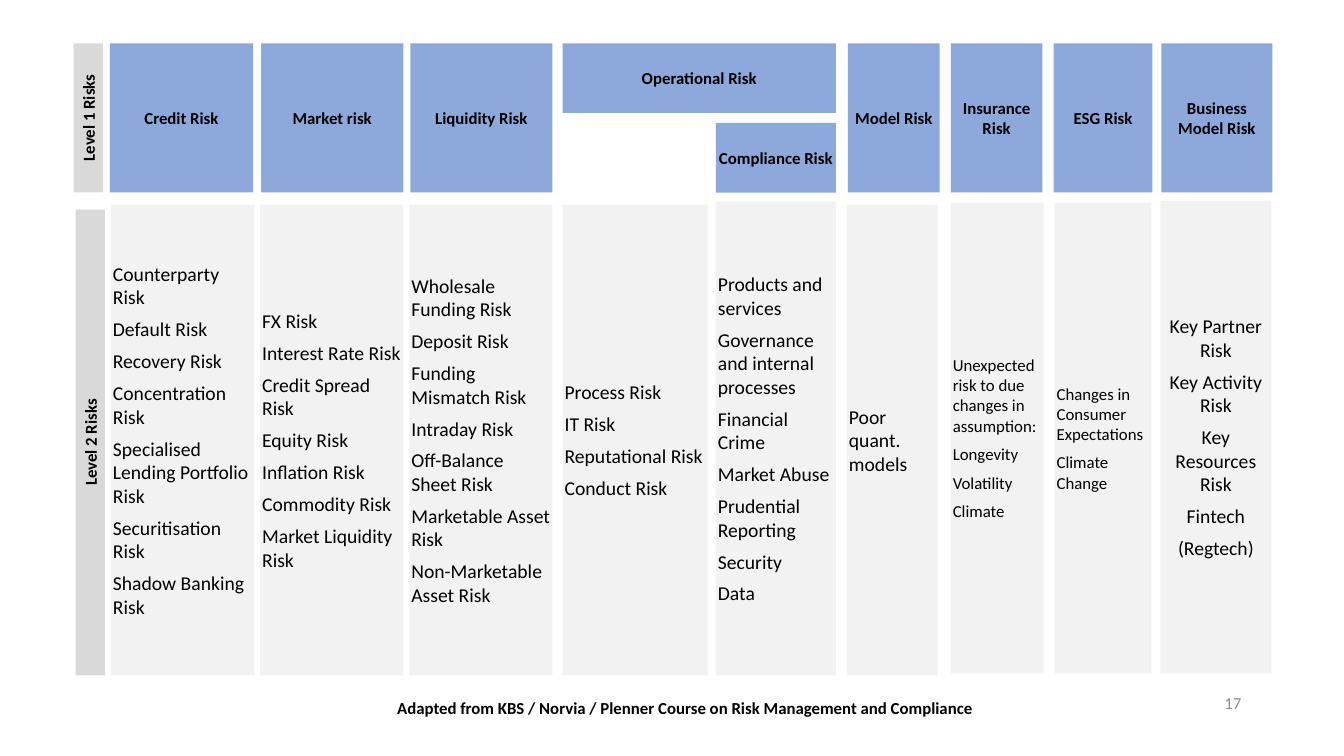
"""Build a risk taxonomy slide with level 1 risks above their level 2 risks."""
from dataclasses import dataclass

from pptx import Presentation
from pptx import util as u
from pptx.dml import color
from pptx.enum import shapes, text


@dataclass(frozen=True)
class Theme:
    """Colours, font and type sizes of the slide."""
    font: str = "Calibri"
    ink: str = "000000"
    muted: str = "8C8C8C"
    level_1: str = "8DA9DB"
    level_2: str = "F2F2F2"
    label: str = "D9D9D9"
    small: int = 12
    large: int = 14


class RiskSlide:
    """Draws each kind of element on one slide in the theme's style."""

    def __init__(self, deck, theme):
        """Add a blank slide to the deck."""
        self.theme = theme
        self.slide = deck.slides.add_slide(deck.slide_layouts[6])

    def add_lines(self, frame, lines, size, align, bold=False, ink=None, before=0, after=0):
        """Put one paragraph per line into a text frame."""
        frame.word_wrap = True
        for index, line in enumerate(lines):
            paragraph = frame.add_paragraph() if index else frame.paragraphs[0]
            paragraph.alignment = align
            paragraph.space_before = u.Pt(before)
            paragraph.space_after = u.Pt(after)
            run = paragraph.add_run()
            run.text = line
            run.font.name = self.theme.font
            run.font.size = u.Pt(size)
            run.font.bold = bold
            run.font.color.rgb = color.RGBColor.from_string(ink or self.theme.ink)

    def block(self, place, fill, inset, direction="horz"):
        """Add a flat rectangle and return its text frame."""
        rectangle = self.slide.shapes.add_shape(
            shapes.MSO_SHAPE.RECTANGLE, *map(u.Inches, place))
        rectangle.shadow.inherit = False
        rectangle.fill.solid()
        rectangle.fill.fore_color.rgb = color.RGBColor.from_string(fill)
        rectangle.line.fill.background()
        rectangle.element.txBody.bodyPr.set("vert", direction)
        frame = rectangle.text_frame
        frame.vertical_anchor = text.MSO_ANCHOR.MIDDLE
        frame.margin_left = frame.margin_right = u.Inches(inset)
        return frame

    def heading(self, place, title, inset=0.04):
        """Add a level 1 risk."""
        frame = self.block(place, self.theme.level_1, inset)
        self.add_lines(frame, [title], self.theme.small, text.PP_ALIGN.CENTER, bold=True)

    def risks(self, place, names, size, centred=False):
        """Add a column of level 2 risks."""
        frame = self.block(place, self.theme.level_2, 0.02)
        if centred:
            self.add_lines(frame, names, size, text.PP_ALIGN.CENTER, before=6)
        else:
            self.add_lines(frame, names, size, text.PP_ALIGN.LEFT, after=6)

    def row_label(self, place, title):
        """Add a row label that reads upwards."""
        frame = self.block(place, self.theme.label, 0.1, "vert270")
        self.add_lines(frame, [title], self.theme.small, text.PP_ALIGN.CENTER, bold=True)

    def caption(self, place, line, align, anchor, bold=False, ink=None):
        """Add a line of text without a fill."""
        frame = self.slide.shapes.add_textbox(*map(u.Inches, place)).text_frame
        frame.vertical_anchor = anchor
        self.add_lines(frame, [line], self.theme.small, align, bold, ink)


TOP, FULL_HEIGHT, HALF_HEIGHT = 0.43, 1.48, 0.69
COMPLIANCE_TOP = TOP + FULL_HEIGHT - HALF_HEIGHT

LEVEL_1 = [
    ("Credit Risk", 1.09, 1.42),
    ("Market risk", 2.59, 1.41),
    ("Liquidity Risk", 4.07, 1.41),
    ("Model Risk", 8.41, 0.91),
    ("Insurance Risk", 9.43, 0.91),
    ("ESG Risk", 10.45, 0.98),
    ("Business Model Risk", 11.52, 1.1),
]

LEVEL_2 = [
    ((1.1, 2.03, 1.42, 4.67), [
        "Counterparty Risk", "Default Risk", "Recovery Risk", "Concentration Risk",
        "Specialised Lending Portfolio Risk", "Securitisation Risk",
        "Shadow Banking Risk"]),
    ((2.58, 2.03, 1.42, 4.67), [
        "FX Risk", "Interest Rate Risk", "Credit Spread Risk", "Equity Risk",
        "Inflation Risk", "Commodity Risk", "Market Liquidity Risk"]),
    ((4.06, 2.03, 1.42, 4.67), [
        "Wholesale Funding Risk", "Deposit Risk", "Funding Mismatch Risk",
        "Intraday Risk", "Off-Balance Sheet Risk", "Marketable Asset Risk",
        "Non-Marketable Asset Risk"]),
    ((5.58, 2.03, 1.44, 4.67), [
        "Process Risk", "IT Risk", "Reputational Risk", "Conduct Risk"]),
    ((7.1, 2, 1.19, 4.7), [
        "Products and services", "Governance and internal processes",
        "Financial Crime", "Market Abuse", "Prudential Reporting", "Security",
        "Data"]),
    ((8.4, 2.03, 0.9, 4.67), ["Poor quant. models"]),
]

LEVEL_2_SMALL = [
    ((9.43, 2.01, 0.92, 4.67), [
        "Unexpected risk to due changes in assumption:", "Longevity", "Volatility",
        "Climate"]),
    ((10.46, 2.01, 0.96, 4.67), [
        "Changes in Consumer Expectations", "Climate Change"]),
]

BUSINESS_MODEL_RISKS = [
    "Key Partner Risk", "Key Activity Risk", "Key Resources Risk", "Fintech",
    "(Regtech)"]


def main():
    """Build and save the deck."""
    deck = Presentation()
    deck.slide_width, deck.slide_height = u.Inches(13.33), u.Inches(7.5)
    theme = Theme()
    page = RiskSlide(deck, theme)

    page.row_label((0.73, TOP, 0.29, FULL_HEIGHT), "Level 1 Risks")
    for title, left, width in LEVEL_1:
        page.heading((left, TOP, width, FULL_HEIGHT), title)
    page.heading((5.58, TOP, 2.71, HALF_HEIGHT), "Operational Risk")
    page.heading((7.1, COMPLIANCE_TOP, 1.19, HALF_HEIGHT), "Compliance Risk", inset=0)

    page.row_label((0.75, 2.08, 0.29, 4.62), "Level 2 Risks")
    for place, names in LEVEL_2:
        page.risks(place, names, theme.large)
    for place, names in LEVEL_2_SMALL:
        page.risks(place, names, theme.small)
    page.risks((11.51, 1.99, 1.1, 4.69), BUSINESS_MODEL_RISKS, theme.large, centred=True)

    page.caption((3.84, 6.87, 8.89, 0.3),
                 "Adapted from KBS / Norvia / Plenner Course on Risk Management and Compliance",
                 text.PP_ALIGN.LEFT, text.MSO_ANCHOR.TOP, bold=True)
    page.caption((9.41, 6.77, 3, 0.4), "17",
                 text.PP_ALIGN.RIGHT, text.MSO_ANCHOR.MIDDLE, ink=theme.muted)
    deck.save("out.pptx")


if __name__ == "__main__":
    main()
